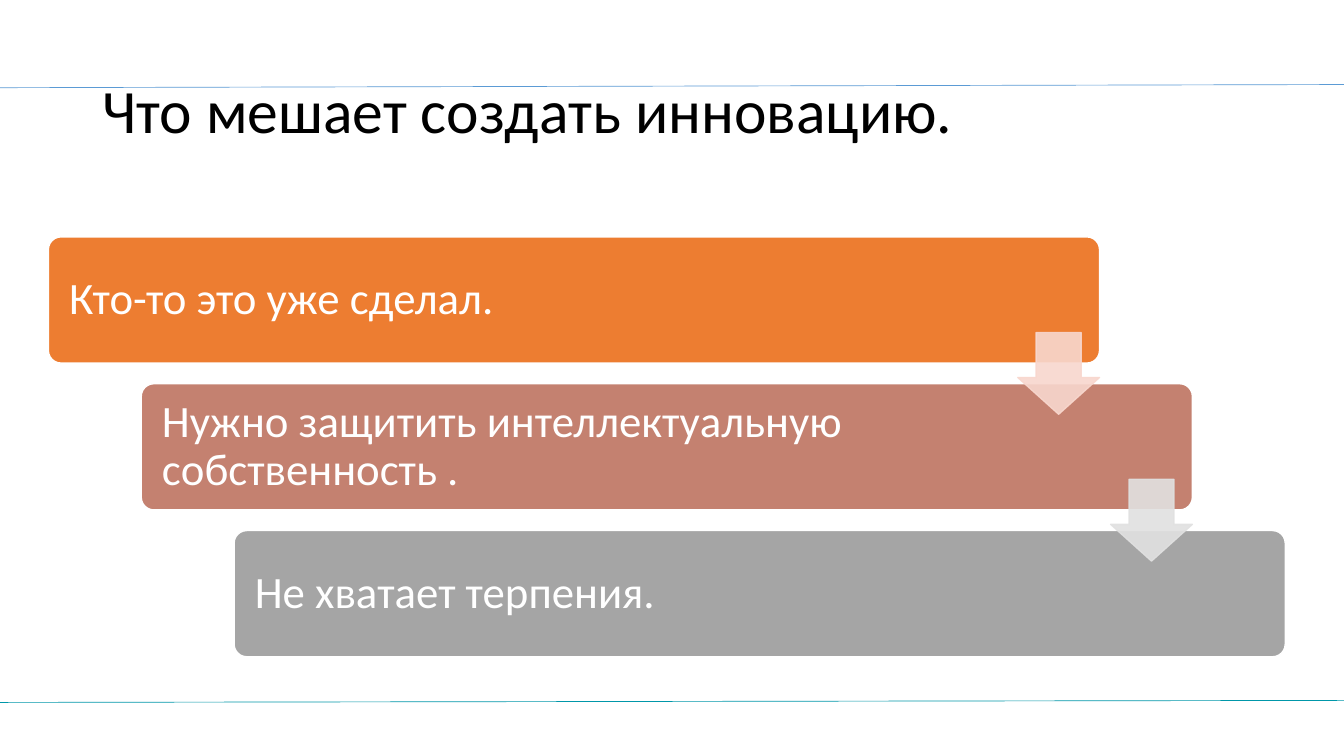
from lxml import etree
from pptx import Presentation
from pptx.dml.color import RGBColor
from pptx.enum.shapes import MSO_CONNECTOR as Link, MSO_SHAPE as Shape
from pptx.enum.text import MSO_ANCHOR as Anchor, MSO_AUTO_SIZE as Fit, PP_ALIGN as Align
from pptx.oxml.ns import qn
from pptx.util import Cm, Pt


def paint(color_format, hex_color, alpha=None):
    color_format.rgb = RGBColor.from_string(hex_color)
    if alpha is not None:
        solid = color_format._xFill
        etree.SubElement(solid[0], qn("a:alpha")).set("val", str(alpha * 1000))


def write(shape, text, size, hex_color, frame_format):
    frame = shape.text_frame
    frame.text = text
    for name, value in frame_format.items():
        setattr(frame, name, value)
    paragraph = frame.paragraphs[0]
    for name, value in {"alignment": Align.LEFT, "line_spacing": 0.9}.items():
        setattr(paragraph, name, value)
    font = paragraph.runs[0].font
    for name, value in {"name": "Calibri", "size": Pt(size), "bold": False}.items():
        setattr(font, name, value)
    paint(font.color, hex_color)


deck = Presentation()
deck.slide_width, deck.slide_height = Cm(33.87), Cm(19.05)
slide = deck.slides.add_slide(deck.slide_layouts[5])

# Thin rules above and below the content
for start_y, end_y, rule_color in [(2.21, 2.13, "5B9BD5"), (17.7, 17.65, "0097A9")]:
    rule = slide.shapes.add_connector(Link.STRAIGHT, 0, Cm(start_y), Cm(33.87), Cm(end_y))
    rule.line.width = Pt(0.48)
    paint(rule.line.color, rule_color)
    etree.SubElement(rule._element.spPr, qn("a:effectLst"))

# Title
title = slide.shapes.title
for side, length in {"left": 2.33, "top": 1.01, "width": 29.21, "height": 3.68}.items():
    setattr(title, side, Cm(length))
centred = {"vertical_anchor": Anchor.MIDDLE, "word_wrap": True, "auto_size": Fit.NONE}
write(title, "Что мешает создать инновацию.", 44, "000000", centred)

# Staircase of obstacles, then the arrows that lead down it
step_x, step_y = 2.34, 3.7
obstacles = [
    ("Кто-то это уже сделал.", "ED7D31"),
    ("Нужно защитить интеллектуальную собственность .", "C48170"),
    ("Не хватает терпения.", "A5A5A5"),
]
obstacle_frame = centred | {
    "margin_left": Cm(0.43), "margin_right": Cm(4.83),
    "margin_top": Cm(0.4), "margin_bottom": Cm(0.4),
}
for level, (obstacle, bar_color) in enumerate(obstacles):
    bar = slide.shapes.add_shape(
        Shape.ROUNDED_RECTANGLE, Cm(1.22 + level * step_x), Cm(5.97 + level * step_y),
        Cm(26.49), Cm(3.18))
    bar.adjustments[0] = 0.1
    bar.shadow.inherit = False
    bar.fill.solid()
    paint(bar.fill.fore_color, bar_color)
    bar.line.width = Pt(1)
    paint(bar.line.color, "FFFFFF")
    write(bar, obstacle, 32, "FFFFFF", obstacle_frame)

for level, arrow_color in enumerate(["F8D7CE", "E1E1E1"]):
    arrow = slide.shapes.add_shape(
        Shape.DOWN_ARROW, Cm(25.65 + level * step_x), Cm(8.38 + level * step_y),
        Cm(2.06), Cm(2.06))
    arrow.adjustments[0], arrow.adjustments[1] = 0.55, 0.45
    arrow.shadow.inherit = False
    arrow.fill.solid()
    arrow.line.width = Pt(1)
    for tint in (arrow.fill.fore_color, arrow.line.color):
        paint(tint, arrow_color, alpha=90)

deck.save("out.pptx")
